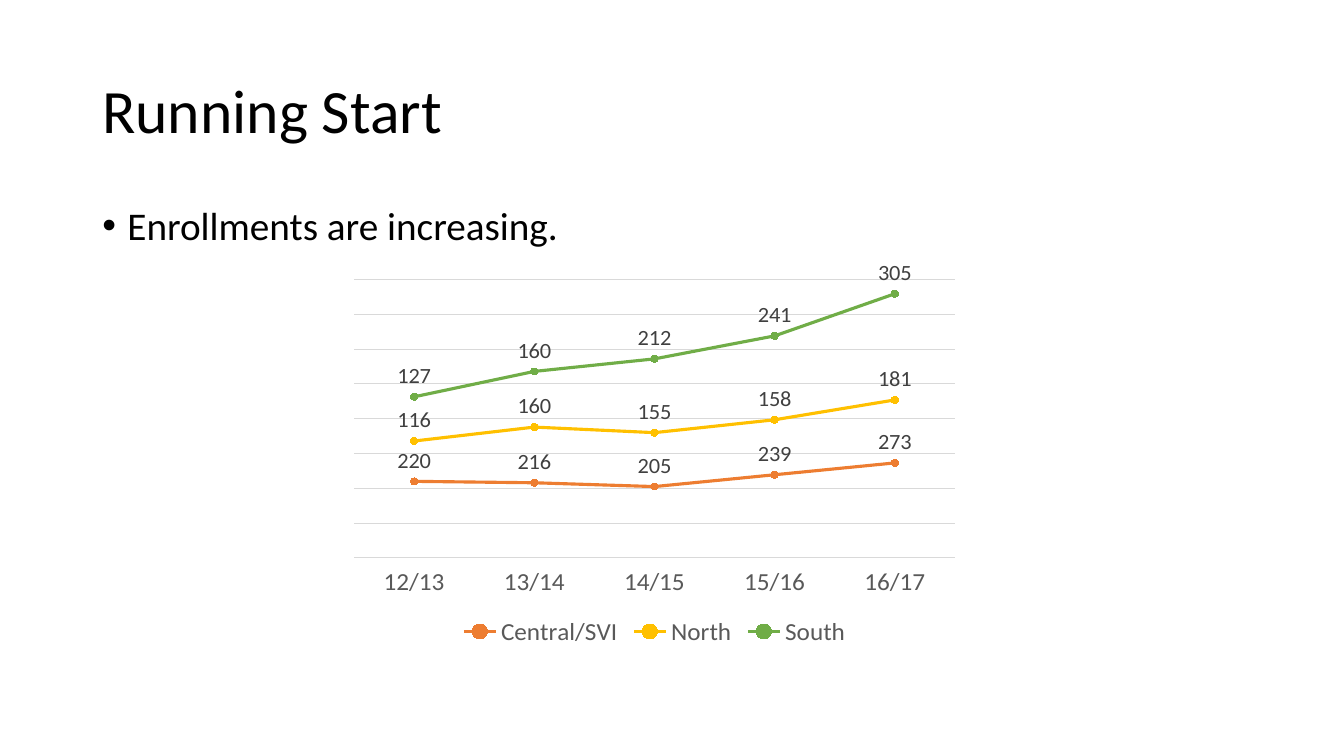
from dataclasses import dataclass
from lxml import etree
from pptx import Presentation
from pptx.chart.data import CategoryChartData
from pptx.dml.color import RGBColor
from pptx.enum.chart import XL_CHART_TYPE as ChartType, XL_LABEL_POSITION as LabelPosition
from pptx.enum.chart import XL_LEGEND_POSITION as LegendPosition, XL_MARKER_STYLE as MarkerStyle
from pptx.enum.chart import XL_TICK_LABEL_POSITION as TickLabelPosition, XL_TICK_MARK as TickMark
from pptx.enum.text import MSO_ANCHOR as Anchor
from pptx.oxml.ns import qn
from pptx.util import Pt


@dataclass(frozen=True)
class Theme:
    font: str = "Calibri"
    text: str = "000000"
    axis_text: str = "595959"
    label_text: str = "404040"
    grid: str = "D9D9D9"
    title_size: int = 44
    body_size: int = 28
    axis_size: int = 18
    label_size: int = 16


theme = Theme()


def style_font(font, size, color):
    font.name = theme.font
    font.size = Pt(size)
    font.color.rgb = RGBColor.from_string(color)


def add_text(slide, box, text, size, anchor):
    shape = slide.shapes.add_textbox(*[Pt(length) for length in box])
    shape.text_frame.word_wrap = True
    shape.text_frame.vertical_anchor = anchor
    paragraph = shape.text_frame.paragraphs[0]
    paragraph.line_spacing = 0.9
    run = paragraph.add_run()
    run.text = text
    style_font(run.font, size, theme.text)
    return paragraph


presentation = Presentation()
presentation.slide_width = Pt(960)
presentation.slide_height = Pt(540)
slide = presentation.slides.add_slide(presentation.slide_layouts[6])

add_text(slide, (66, 28.75, 828, 104.4), "Running Start", theme.title_size, Anchor.MIDDLE)
bullet = add_text(slide, (66, 143.75, 828, 342.6), "Enrollments are increasing.", theme.body_size, Anchor.TOP)
bullet.space_before = Pt(10)
properties = bullet._p.get_or_add_pPr()
properties.set("marL", str(Pt(18)))
properties.set("indent", str(-Pt(18)))
etree.SubElement(properties, qn("a:buFont")).set("typeface", "Arial")
etree.SubElement(properties, qn("a:buChar")).set("char", "•")

enrollments = [
    ("Central/SVI", "ED7D31", (220, 216, 205, 239, 273)),
    ("North", "FFC000", (116, 160, 155, 158, 181)),
    ("South", "70AD47", (127, 160, 212, 241, 305)),
]
chart_data = CategoryChartData(number_format="0")
chart_data.categories = [f"{year}/{year + 1}" for year in range(12, 17)]
for campus, color, counts in enrollments:
    chart_data.add_series(campus, counts)

chart = slide.shapes.add_chart(
    ChartType.LINE_MARKERS_STACKED, Pt(244), Pt(185.75), Pt(447), Pt(279.4), chart_data
).chart
chart.has_title = False
style_font(chart.font, theme.axis_size, theme.axis_text)
chart.has_legend = True
chart.legend.position = LegendPosition.BOTTOM
chart.legend.include_in_layout = False
style_font(chart.legend.font, theme.axis_size, theme.axis_text)

year_axis = chart.category_axis
year_axis.major_tick_mark = TickMark.NONE
year_axis.minor_tick_mark = TickMark.NONE
year_axis.tick_label_position = TickLabelPosition.LOW
style_font(year_axis.tick_labels.font, theme.axis_size, theme.axis_text)

count_axis = chart.value_axis
count_axis.visible = False
count_axis.minimum_scale = 0
count_axis.maximum_scale = 800
count_axis.major_unit = 100
count_axis.has_major_gridlines = True
for line in (year_axis.format.line, count_axis.major_gridlines.format.line):
    line.color.rgb = RGBColor.from_string(theme.grid)
    line.width = Pt(0.75)

plot = chart.plots[0]
plot.vary_by_categories = False
for series, (campus, color, counts) in zip(plot.series, enrollments):
    series_color = RGBColor.from_string(color)
    series.smooth = False
    series.format.line.color.rgb = series_color
    series.format.line.width = Pt(2.25)
    series.marker.style = MarkerStyle.CIRCLE
    series.marker.size = 5
    series.marker.format.fill.solid()
    series.marker.format.fill.fore_color.rgb = series_color
    series.marker.format.line.color.rgb = series_color
    labels = series.data_labels
    labels.show_value = True
    labels.position = LabelPosition.ABOVE
    labels.number_format = "0"
    labels.number_format_is_linked = False
    style_font(labels.font, theme.label_size, theme.label_text)

presentation.save("out.pptx")
